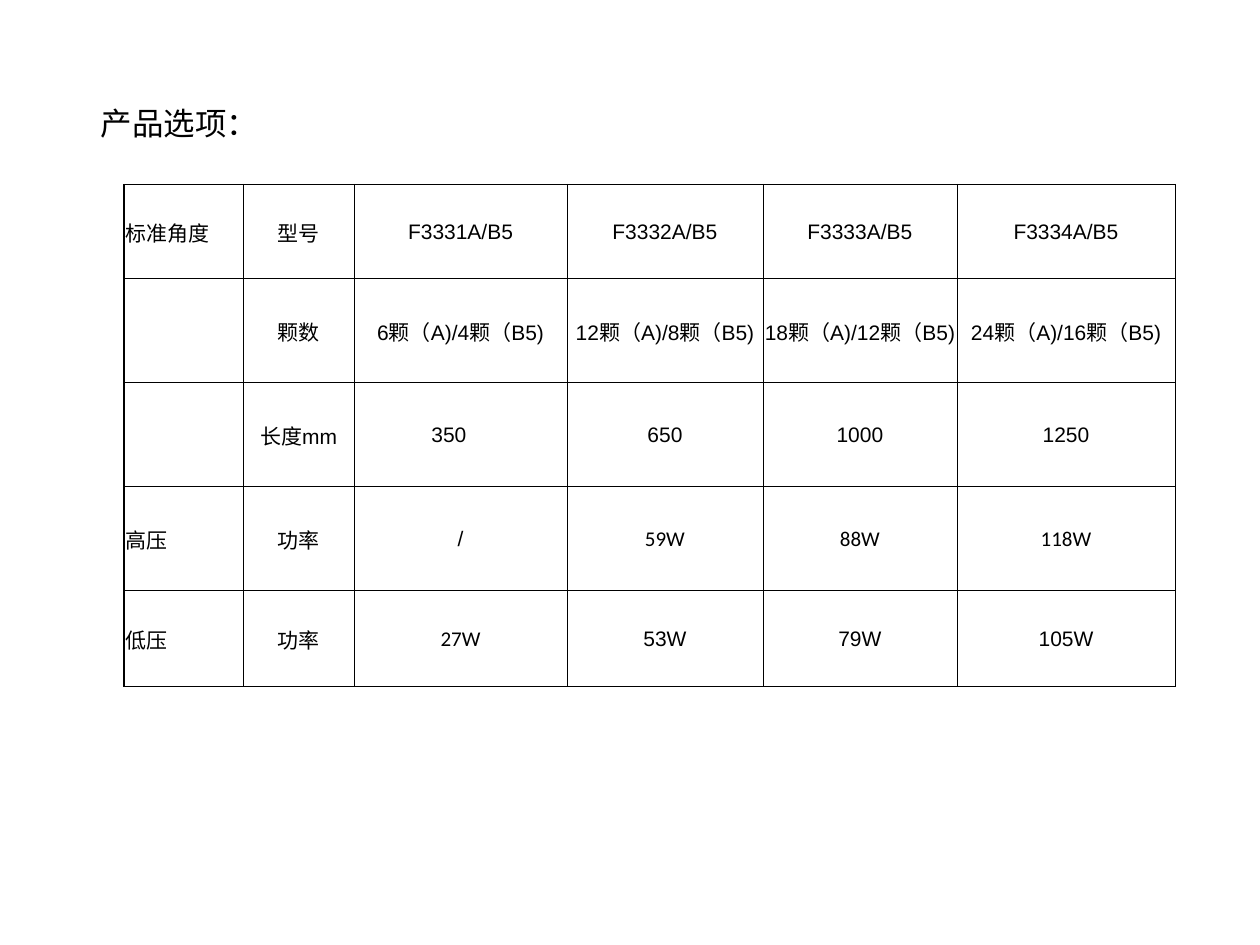
from lxml import etree
from pptx import Presentation
from pptx.dml.color import RGBColor
from pptx.enum.text import MSO_ANCHOR, MSO_AUTO_SIZE, PP_ALIGN
from pptx.oxml.ns import qn
from pptx.util import Cm, Pt

LEFT, CENTER = PP_ALIGN.LEFT, PP_ALIGN.CENTER
MIDDLE = MSO_ANCHOR.MIDDLE
GROW = MSO_AUTO_SIZE.SHAPE_TO_FIT_TEXT

COLORS = {"ink": "000000", "paper": "FFFFFF"}
CJK, LATIN, POWER = "Noto Sans CJK SC", "Arial", "Calibri"

COLUMN_WIDTHS = [2.4, 2.24, 4.29, 3.95, 3.91, 4.4]
ROW_HEIGHTS = [1.89, 2.1, 2.1, 2.1, 1.93]
OPTIONS = [
    ["标准角度", "型号", "F3331A/B5", "F3332A/B5", "F3333A/B5", "F3334A/B5"],
    ["", "颗数", "6颗（A)/4颗（B5)", "12颗（A)/8颗（B5)",
     "18颗（A)/12颗（B5)", "24颗（A)/16颗（B5)"],
    ["", "长度mm", "350", "650", "1000", "1250"],
    ["高压", "功率", "/", "59W", "88W", "118W"],
    ["低压", "功率", "27W", "53W", "79W", "105W"],
]
HIGH_VOLTAGE = 3
POWER_CELLS = {(3, 3), (3, 4), (3, 5), (4, 2)}
LENGTH_350 = (2, 2)


def write_text(frame, text, size=12, font=LATIN, align=LEFT):
    paragraph = frame.paragraphs[0]
    paragraph.alignment = align
    run = paragraph.add_run()
    run.text = text
    run.font.size = Pt(size)
    run.font.name = font
    run.font.color.rgb = RGBColor.from_string(COLORS["ink"])
    etree.SubElement(run.font._element, qn("a:ea"), typeface=CJK)


def add_borders(cell, widths):
    properties = cell._tc.get_or_add_tcPr()
    for side, width in widths.items():
        border = etree.SubElement(properties, qn(f"a:ln{side}"), w=str(Pt(width)))
        fill = etree.SubElement(border, qn("a:solidFill"))
        etree.SubElement(fill, qn("a:srgbClr"), val=COLORS["ink"])


def cell_font(row, column, text):
    if (row, column) in POWER_CELLS:
        return POWER
    if column == 0 or text in ("型号", "颗数"):
        return CJK
    return LATIN


def format_cell(cell, row, column, text):
    cell.vertical_anchor = MIDDLE
    cell.margin_left = cell.margin_top = cell.margin_right = Cm(0.03)
    cell.margin_bottom = 0
    if (row, column) == LENGTH_350:
        cell.margin_right = Cm(0.5)
    add_borders(cell, {
        "L": 1 if column == 0 else 0.5,
        "R": 0.5,
        "T": 1 if row == 0 else 0.5,
        "B": 1 if row == len(OPTIONS) - 1 else 0.5,
    })
    if column == 0 or (row == HIGH_VOLTAGE and column > 1):
        cell.fill.background()
    else:
        cell.fill.solid()
        cell.fill.fore_color.rgb = RGBColor.from_string(COLORS["paper"])
    if text:
        write_text(cell.text_frame, text, font=cell_font(row, column, text),
                   align=CENTER if column else LEFT)


def add_options_table(slide):
    table = slide.shapes.add_table(
        len(OPTIONS), len(COLUMN_WIDTHS), Cm(2.5), Cm(3.72),
        Cm(sum(COLUMN_WIDTHS)), Cm(sum(ROW_HEIGHTS))).table
    table.first_row = table.horz_banding = False
    for column, width in zip(table.columns, COLUMN_WIDTHS):
        column.width = Cm(width)
    for row, height in zip(table.rows, ROW_HEIGHTS):
        row.height = Cm(height)
    for row, texts in enumerate(OPTIONS):
        for column, text in enumerate(texts):
            format_cell(table.cell(row, column), row, column, text)


def add_heading(slide, text):
    frame = slide.shapes.add_textbox(Cm(1.78), Cm(1.98), Cm(4.32), Cm(1.02)).text_frame
    frame.word_wrap = True
    frame.auto_size = GROW
    write_text(frame, text, size=18, font=POWER)


def main():
    deck = Presentation()
    deck.slide_width, deck.slide_height = Cm(25.4), Cm(19.05)
    slide = deck.slides.add_slide(deck.slide_layouts[6])
    add_options_table(slide)
    add_heading(slide, "产品选项：")
    deck.save("out.pptx")


if __name__ == "__main__":
    main()
